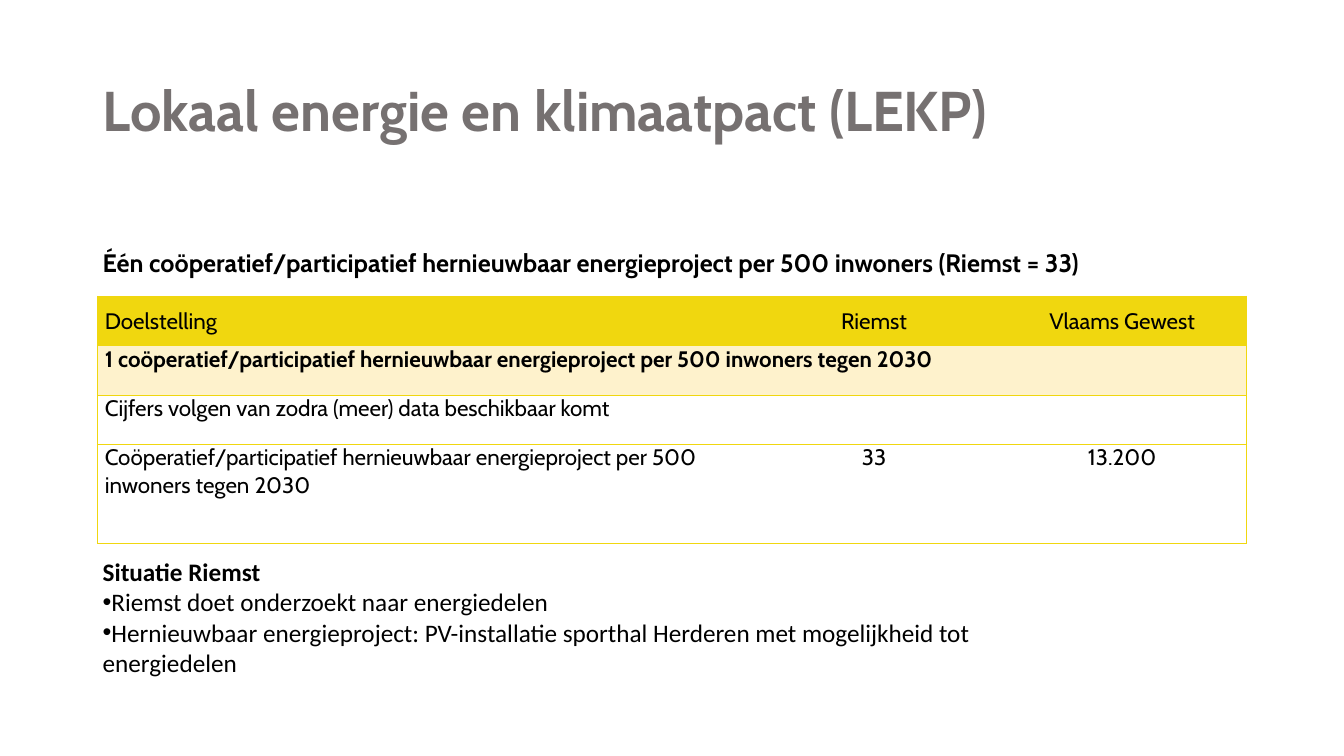
import pptx
import pptx.dml.color
import pptx.enum.text
import pptx.oxml
import pptx.oxml.ns
import pptx.util

SCALE = 9144
YELLOW, CREAM, BLACK, GREY = "F0D70F", "FEF2CC", "000000", "767171"
CENTER = pptx.enum.text.PP_ALIGN.CENTER
LEFT = pptx.enum.text.PP_ALIGN.LEFT
MIDDLE = pptx.enum.text.MSO_ANCHOR.MIDDLE
TOP = pptx.enum.text.MSO_ANCHOR.TOP

TITLE = "Lokaal energie en klimaatpact (LEKP)"
SUBTITLE = ("Één coöperatief/participatief hernieuwbaar energieproject "
            "per 500 inwoners (Riemst = 33)")
COLUMNS = [647, 246, 246]
ROW_HEIGHTS = [49, 49, 49, 98]
ROWS = [
    ["Doelstelling", "Riemst", "Vlaams Gewest"],
    ["1 coöperatief/participatief hernieuwbaar energieproject per 500 inwoners tegen 2030", "", ""],
    ["Cijfers volgen van zodra (meer) data beschikbaar komt", "", ""],
    ["Coöperatief/participatief hernieuwbaar energieproject per 500 inwoners tegen 2030",
     "33", "13.200"],
]
SITUATION = "Situatie Riemst"
POINTS = [
    "Riemst doet onderzoekt naar energiedelen",
    "Hernieuwbaar energieproject: PV-installatie sporthal Herderen met mogelijkheid tot energiedelen",
]


def px(length):
    """Turn whole px into EMU."""
    return pptx.util.Emu(length * SCALE)


def color(value):
    """Turn a hex string into a colour."""
    return pptx.dml.color.RGBColor.from_string(value)


def apply(target, values):
    """Set every attribute of a format dict on the target."""
    for name, value in values.items():
        setattr(target, name, value)


def place(shape, left, top, width, height):
    """Move and size a shape in px."""
    apply(shape, {"left": px(left), "top": px(top), "width": px(width), "height": px(height)})


def write(paragraph, text, size, name="Cabin", fill=BLACK, bold=False, **layout):
    """Write one formatted run in a paragraph."""
    apply(paragraph, layout)
    run = paragraph.add_run()
    run.text = text
    apply(run.font, {"size": pptx.util.Pt(size), "name": name, "bold": bold})
    run.font.color.rgb = color(fill)


def add_xml(parent, tag, content="", **attributes):
    """Append a drawing element to a parent."""
    listed = "".join(f' {name}="{value}"' for name, value in attributes.items())
    namespace = pptx.oxml.ns.nsdecls("a")
    parent.append(pptx.oxml.parse_xml(f"<a:{tag} {namespace}{listed}>{content}</a:{tag}>"))


def add_bullet(paragraph):
    """Give a paragraph a hanging round bullet."""
    properties = paragraph._p.get_or_add_pPr()
    apply(properties, {"marL": px(31), "indent": px(-31)})
    add_xml(properties, "buFont", typeface="Arial")
    add_xml(properties, "buChar", char="•")


def add_borders(cell, sides):
    """Draw the named cell sides in yellow and clear the others."""
    solid = f'<a:solidFill><a:srgbClr val="{YELLOW}"/></a:solidFill>'
    for side in "LRTB":
        add_xml(cell._tc.get_or_add_tcPr(), f"ln{side}",
                solid if side in sides else "<a:noFill/>", w=12700)


def add_goal_table(slide):
    """Add the table of goals."""
    frame = slide.shapes.add_table(len(ROWS), len(COLUMNS), px(97), px(294),
                                   px(sum(COLUMNS)), px(sum(ROW_HEIGHTS)))
    table = frame.table
    apply(table, {"first_row": False, "horz_banding": False})
    for column, width in zip(table.columns, COLUMNS):
        column.width = px(width)
    for row, height in zip(table.rows, ROW_HEIGHTS):
        row.height = px(height)
    table.cell(1, 0).merge(table.cell(1, 2))
    fills = {0: YELLOW, 1: CREAM}
    for row, texts in enumerate(ROWS):
        for column, text in enumerate(texts):
            cell = table.cell(row, column)
            apply(cell, {"margin_left": px(7), "margin_right": px(7), "margin_top": 0,
                         "margin_bottom": 0, "vertical_anchor": TOP if row else MIDDLE})
            last = column == len(COLUMNS) - 1 or cell.is_merge_origin
            add_borders(cell, "TB" + "L" * (column == 0) + "R" * last)
            if row in fills:
                cell.fill.solid()
                cell.fill.fore_color.rgb = color(fills[row])
            else:
                cell.fill.background()
            if text:
                write(cell.text_frame.paragraphs[0], text, 16, bold=row == 1,
                      alignment=CENTER if column else LEFT)


def add_text(slide, left, top, width, height):
    """Add a wrapping text box and return its text frame."""
    frame = slide.shapes.add_textbox(px(left), px(top), px(width), px(height)).text_frame
    frame.word_wrap = True
    return frame


def main():
    """Build the slide and save it."""
    presentation = pptx.Presentation()
    apply(presentation, {"slide_width": px(1333), "slide_height": px(750)})
    slide = presentation.slides.add_slide(presentation.slide_layouts[5])
    title = slide.shapes.title
    place(title, 92, 40, 1150, 145)
    title.text_frame.vertical_anchor = MIDDLE
    write(title.text_frame.paragraphs[0], TITLE, 40, fill=GREY, bold=True,
          alignment=LEFT, line_spacing=0.9)
    add_goal_table(slide)
    subtitle = add_text(slide, 92, 244, 1126, 50)
    write(subtitle.paragraphs[0], SUBTITLE, 18, bold=True, line_spacing=0.9)
    situation = add_text(slide, 92, 547, 948, 131)
    write(situation.paragraphs[0], SITUATION, 18, "Calibri", bold=True)
    for point in POINTS:
        paragraph = situation.add_paragraph()
        add_bullet(paragraph)
        write(paragraph, point, 18, "Calibri")
    presentation.save("out.pptx")


if __name__ == "__main__":
    main()
